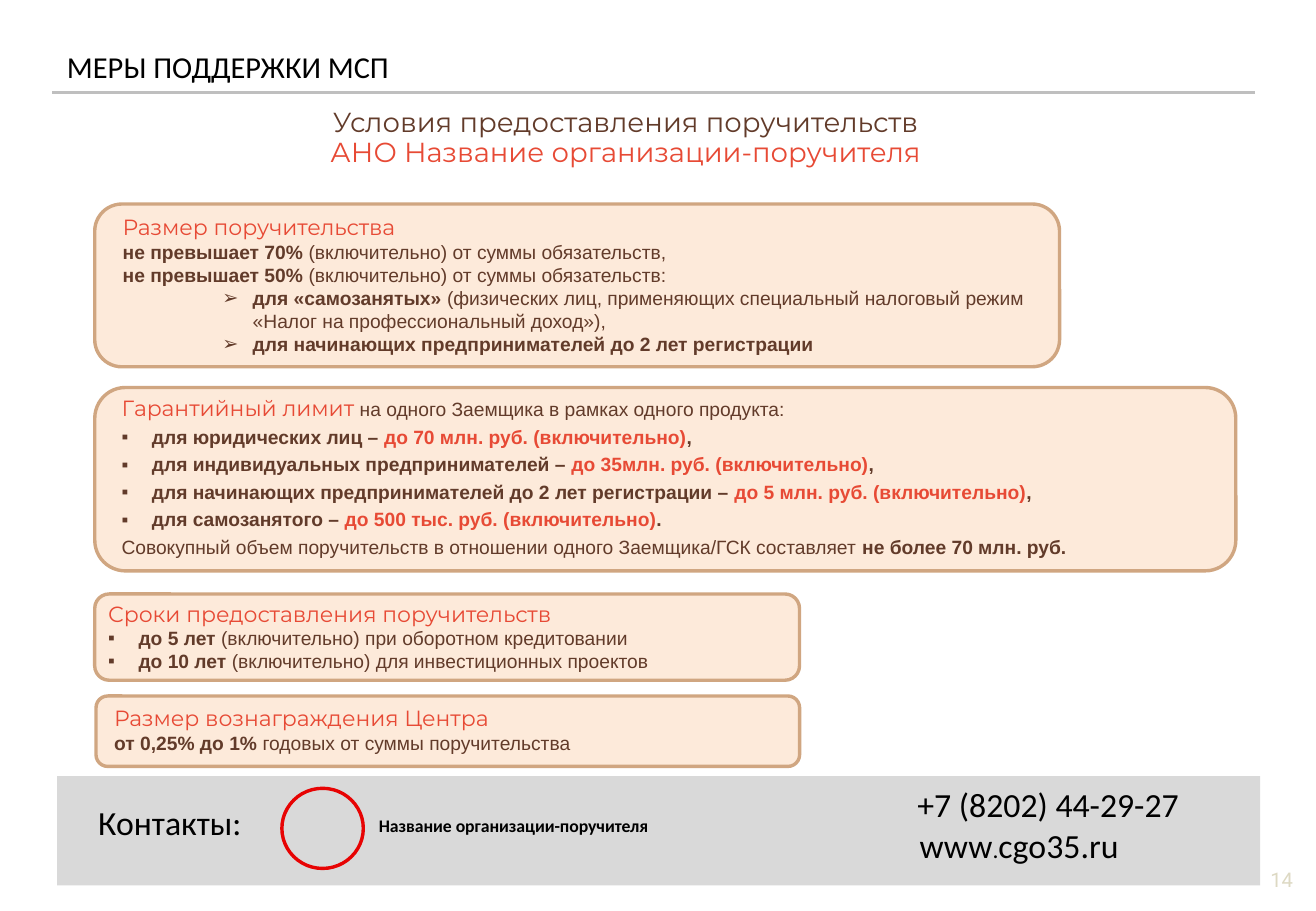
from lxml import etree
from pptx import Presentation
from pptx.dml.color import RGBColor
from pptx.enum.shapes import MSO_CONNECTOR, MSO_SHAPE
from pptx.enum.text import MSO_ANCHOR, MSO_AUTO_SIZE, PP_ALIGN
from pptx.oxml.ns import qn
from pptx.util import Inches, Pt

LEFT, CENTER, RIGHT, JUST = (PP_ALIGN.LEFT, PP_ALIGN.CENTER,
                             PP_ALIGN.RIGHT, PP_ALIGN.JUSTIFY)
TOP, MIDDLE = MSO_ANCHOR.TOP, MSO_ANCHOR.MIDDLE
FIXED = MSO_AUTO_SIZE.NONE
RECT, ROUND, OVAL = MSO_SHAPE.RECTANGLE, MSO_SHAPE.ROUNDED_RECTANGLE, MSO_SHAPE.OVAL
STRAIGHT = MSO_CONNECTOR.STRAIGHT

BLACK = RGBColor(0x00, 0x00, 0x00)
BROWN = RGBColor(0x62, 0x3B, 0x2A)
CORAL = RGBColor(0xE7, 0x4A, 0x35)
PEACH = RGBColor(0xFD, 0xEA, 0xDA)
TAN = RGBColor(0xD0, 0xA6, 0x81)
GRAY = RGBColor(0xD9, 0xD9, 0xD9)
RULE = RGBColor(0xBF, 0xBF, 0xBF)
RED = RGBColor(0xE7, 0x03, 0x03)
SAND = RGBColor(0xDD, 0xD9, 0xC3)


def style(name, size, color, bold=False):
    return {"name": name, "size": Pt(size), "color": color, "bold": bold}


HEAD = style("Montserrat", 13, CORAL)
PLAIN = style("Arial", 11.4, BROWN)
BOLD = style("Arial", 11.4, BROWN, True)
HOT = style("Arial", 11.4, CORAL, True)
LEAD = style("Montserrat", 16.3, BROWN)
LEAD_HOT = style("Montserrat", 16.3, CORAL)
TITLE = style("Calibri", 18, BLACK)
PHONE = style("Calibri", 20, BLACK)
DOT = style("Calibri", 14, BLACK)
LABEL = style("Calibri", 10.5, BLACK, True)
PAGE = style("Roboto", 12, SAND)

# A paragraph is (bullet, text indent, runs)
SIZE = [
    ("", 0, [("Размер поручительства", HEAD)]),
    ("", 0, [("не превышает 70% ", BOLD),
             ("(включительно) от суммы обязательств,", PLAIN)]),
    ("", 0, [("не превышает 50% ", BOLD),
             ("(включительно) от суммы обязательств:", PLAIN)]),
    ("➢", 1.07, [("для «самозанятых» ", BOLD),
                 ("(физических лиц, применяющих специальный налоговый режим "
                  "«Налог на профессиональный доход»),", PLAIN)]),
    ("➢", 1.07, [("для начинающих предпринимателей до 2 лет регистрации", BOLD)]),
]
CAPS = [
    ("для юридических лиц – ", "до 70 млн. руб. (включительно)", ","),
    ("для индивидуальных предпринимателей – ", "до 35млн. руб. (включительно)", ","),
    ("для начинающих предпринимателей до 2 лет регистрации – ",
     "до 5 млн. руб. (включительно)", ","),
    ("для самозанятого – ", "до 500 тыс. руб. (включительно)", "."),
]
LIMIT = [
    ("", 0, [("Гарантийный лимит ", HEAD),
             ("на одного Заемщика в рамках одного продукта:", PLAIN)]),
    *[("▪", 0.25, list(zip(cap, (BOLD, HOT, BOLD)))) for cap in CAPS],
    ("", 0, [("Совокупный объем поручительств в отношении одного "
              "Заемщика/ГСК составляет ", PLAIN),
             ("не более 70 млн. руб.", BOLD)]),
]
TERM = [
    ("", 0, [("Сроки предоставления поручительств", HEAD)]),
    ("▪", 0.25, [("до 5 лет ", BOLD),
                 ("(включительно) при оборотном кредитовании", PLAIN)]),
    ("▪", 0.25, [("до 10 лет ", BOLD),
                 ("(включительно) для инвестиционных проектов", PLAIN)]),
]
FEE = [
    ("", 0, [("Размер вознаграждения Центра", HEAD)]),
    ("", 0, [("от 0,25% до 1% ", BOLD), ("годовых от суммы поручительства", PLAIN)]),
]


def place(shape, box):
    for key, val in zip(("left", "top", "width", "height"), box):
        setattr(shape, key, Inches(val))


def mark(para, sign, indent):
    ppr = para._p.get_or_add_pPr()
    ppr.set("marL", str(Inches(indent)))
    ppr.set("indent", str(Inches(-0.25 if sign else 0)))
    if not sign:
        etree.SubElement(ppr, qn("a:buNone"))
        return
    tint = etree.SubElement(ppr, qn("a:buClr"))
    etree.SubElement(tint, qn("a:srgbClr")).set("val", str(BROWN))
    etree.SubElement(ppr, qn("a:buFont")).set("typeface", "Arial")
    etree.SubElement(ppr, qn("a:buChar")).set("char", sign)


def write(shape, box, paras, align=LEFT, anchor=TOP, line=1.0, after=0, pad=0.1):
    place(shape, box)
    frame = shape.text_frame
    form = {"word_wrap": True, "auto_size": FIXED, "vertical_anchor": anchor,
            "margin_left": Inches(pad), "margin_right": Inches(pad),
            "margin_top": Inches(pad / 2), "margin_bottom": Inches(pad / 2)}
    for key, val in form.items():
        setattr(frame, key, val)
    for i, (sign, indent, runs) in enumerate(paras):
        para = frame.add_paragraph() if i else frame.paragraphs[0]
        mark(para, sign, indent)
        form = {"alignment": align, "line_spacing": line,
                "space_before": Pt(0), "space_after": Pt(after)}
        for key, val in form.items():
            setattr(para, key, val)
        for text, look in runs:
            run = para.add_run()
            run.text = text
            for key, val in look.items():
                if key == "color":
                    run.font.color.rgb = val
                else:
                    setattr(run.font, key, val)


def label(slide, box, runs, **form):
    shape = slide.shapes.add_textbox(0, 0, 0, 0)
    write(shape, box, [("", 0, runs)], **form)


def draw(slide, kind, box, fill=None, edge=None):
    shape = slide.shapes.add_shape(kind, *map(Inches, box))
    shape.shadow.inherit = False
    if fill is None:
        shape.fill.background()
    else:
        shape.fill.solid()
        shape.fill.fore_color.rgb = fill
    if edge is None:
        shape.line.fill.background()
    else:
        shape.line.color.rgb = edge
        shape.line.width = Pt(2)


def header(slide, box):
    x, y, w, h = box
    write(slide.shapes.title, (x + 0.04, y, 4.7, 0.38),
          [("", 0, [("МЕРЫ ПОДДЕРЖКИ МСП", TITLE)])], anchor=MIDDLE, pad=0.08)
    rule = slide.shapes.add_connector(
        STRAIGHT, Inches(x), Inches(y + 0.4), Inches(x + w), Inches(y + 0.4))
    rule.line.color.rgb = RULE
    rule.line.width = Pt(1.5)
    etree.SubElement(rule._element.spPr, qn("a:effectLst"))
    lead = slide.shapes.add_textbox(0, 0, 0, 0)
    write(lead, (x + 0.26, y + 0.49, 8.92, h - 0.49),
          [("", 0, [("Условия предоставления поручительств", LEAD)]),
           ("", 0, [("АНО Название организации-поручителя", LEAD_HOT)])],
          align=CENTER, line=0.9)


def card(slide, body, box, inset, paras, **form):
    x, y, w, h = box
    dx, dy = inset
    draw(slide, ROUND, box, PEACH, TAN)
    slide.shapes._spTree.append(body._element)  # text above its card
    write(body, (x + dx, y + dy, w - dx - 0.05, h - dy), paras, **form)


def footer(slide, box):
    x, y, w, h = box
    draw(slide, RECT, box, GRAY)
    label(slide, (x + 0.24, y + 0.16, 1.57, 0.43), [("Контакты:", PHONE)], anchor=MIDDLE)
    draw(slide, OVAL, (x + 1.85, y + 0.1, 0.67, 0.66), edge=RED)
    label(slide, (x + 2.55, y + 0.27, 2.8, 0.27),
          [("Название организации-поручителя", LABEL)], anchor=MIDDLE)
    label(slide, (x + 7, y + 0.02, 2.64, 0.42), [("+7 (8202) 44-29-27", PHONE)],
          anchor=MIDDLE, pad=0.08)
    label(slide, (x + 7, y + 0.35, 2.68, 0.43),
          [("www", PHONE), (".", DOT), ("cgo35.ru", PHONE)])
    label(slide, (x + w - 2.16, y + 0.65, 2.53, 0.4), [("14", PAGE)],
          align=RIGHT, anchor=MIDDLE)


def main():
    deck = Presentation()
    deck.slide_width, deck.slide_height = Inches(10.83), Inches(7.5)
    slide = deck.slides.add_slide(deck.slide_layouts[4])
    size, limit, term, fee = [slide.placeholders[i] for i in range(1, 5)]
    header(slide, (0.43, 0.36, 9.9, 1.21))
    card(slide, size, (0.78, 1.68, 7.94, 1.34), (0.13, 0.03), SIZE)
    card(slide, limit, (0.78, 3.19, 9.39, 1.51), (0.12, 0.03), LIMIT,
         align=JUST, line=0.9, after=4)
    card(slide, term, (0.78, 4.89, 5.8, 0.71), (0.01, 0), TERM)
    card(slide, fee, (0.79, 5.73, 5.79, 0.58), (0.05, 0.02), FEE)
    footer(slide, (0.47, 6.39, 9.9, 0.9))
    deck.save("out.pptx")


if __name__ == "__main__":
    main()
